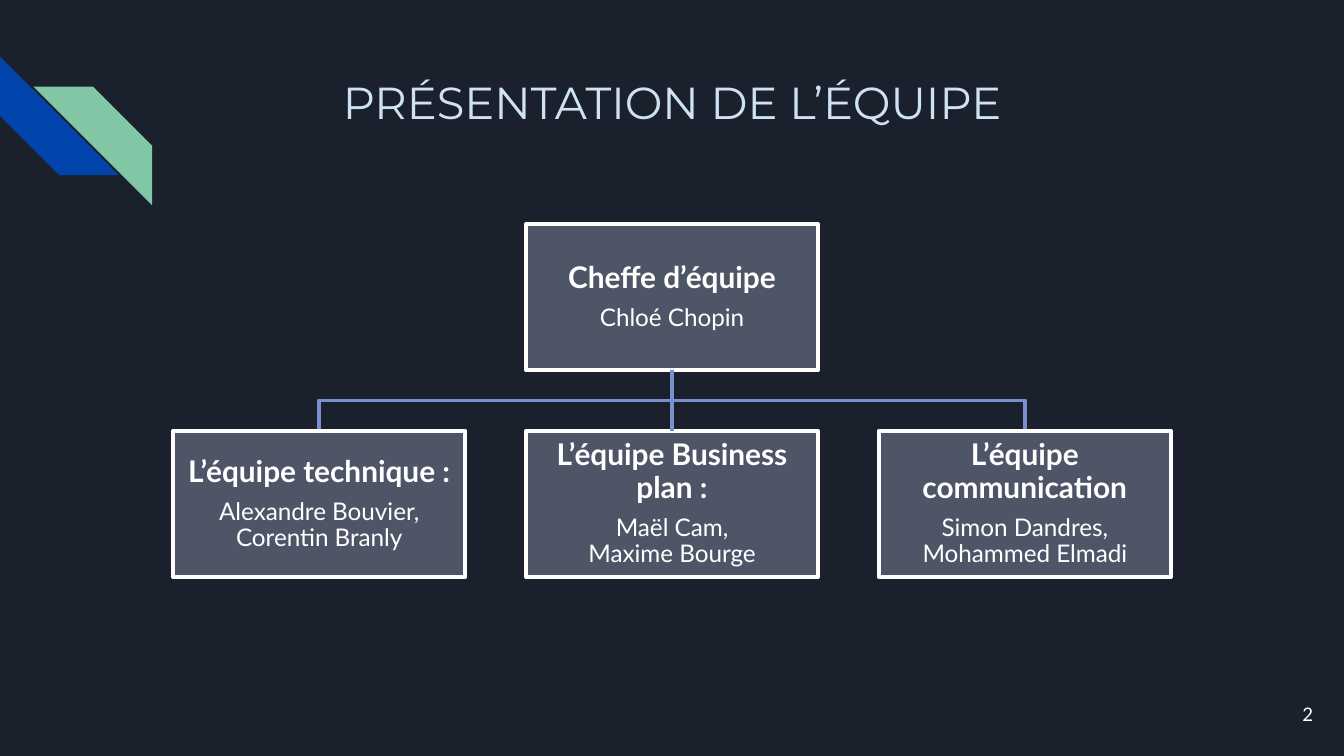
from lxml import etree
from pptx import Presentation
from pptx.dml.color import RGBColor
from pptx.enum.shapes import MSO_CONNECTOR, MSO_SHAPE
from pptx.enum.text import MSO_ANCHOR, MSO_AUTO_SIZE, PP_ALIGN
from pptx.oxml.ns import qn
from pptx.util import Pt

STRIPE, RECTANGLE = MSO_SHAPE.DIAGONAL_STRIPE, MSO_SHAPE.RECTANGLE
STRAIGHT = MSO_CONNECTOR.STRAIGHT
TOP, MIDDLE = MSO_ANCHOR.TOP, MSO_ANCHOR.MIDDLE
CENTER, RIGHT = PP_ALIGN.CENTER, PP_ALIGN.RIGHT
NO_AUTOFIT = MSO_AUTO_SIZE.NONE
BOTTOM_SITE, TOP_SITE = 2, 0

BACKGROUND, WHITE = "1B212C", "FFFFFF"
BLUE, GREEN = "0145AC", "82C7A5"
CARD, LINK, TITLE = "4E5567", "7890CD", "CFE2F3"
LINE_WIDTH = 2

HEADING_FORMAT = {"name": "Lato", "size": Pt(16), "bold": True}
NAME_FORMAT = {"name": "Lato", "size": Pt(13), "bold": False}
TITLE_FORMAT = {"name": "Montserrat", "size": Pt(24), "bold": False}
NUMBER_FORMAT = {"name": "Lato", "size": Pt(10), "bold": False}

LEADER = ("Cheffe d’équipe", ["Chloé Chopin"])
TEAMS = [
    ("L’équipe technique :", ["Alexandre Bouvier, Corentin Branly"]),
    ("L’équipe Business plan :", ["Maël Cam,", "Maxime Bourge"]),
    ("L’équipe communication", ["Simon Dandres, Mohammed Elmadi"]),
]


def color(hex_string):
    return RGBColor.from_string(hex_string)


def set_attributes(target, values):
    for name, value in values.items():
        setattr(target, name, value)


def format_line(line):
    line.color.rgb = color(LINK)
    line.width = Pt(LINE_WIDTH)


def format_frame(frame, margin, anchor):
    set_attributes(frame, {
        "word_wrap": True, "auto_size": NO_AUTOFIT, "vertical_anchor": anchor,
        "margin_left": Pt(margin), "margin_right": Pt(margin),
        "margin_top": Pt(margin), "margin_bottom": Pt(margin),
    })


def write_paragraph(paragraph, text, font_format, font_color, **layout):
    paragraph.text = text
    set_attributes(paragraph, layout)
    set_attributes(paragraph.font, font_format)
    paragraph.font.color.rgb = color(font_color)


def add_stripe(slide, left, top, size, fill):
    shape = slide.shapes.add_shape(STRIPE, Pt(left), Pt(top), Pt(size), Pt(size))
    shape.shadow.inherit = False
    shape.fill.solid()
    shape.fill.fore_color.rgb = color(fill)
    shape.line.fill.background()
    return shape


def add_ornament(slide, left, top, size):
    blue_stripe = add_stripe(slide, left, top, size, BLUE)
    blue_stripe.rotation = 270
    green_stripe = add_stripe(slide, left + 18, top + 16.2, size, GREEN)
    green_stripe._element.spPr.xfrm.set("flipH", "1")


def add_title(slide, left, top, width, height):
    title = slide.shapes.title
    set_attributes(title, {"left": Pt(left), "top": Pt(top),
                           "width": Pt(width), "height": Pt(height)})
    format_frame(title.text_frame, 7.2, TOP)
    write_paragraph(title.text_frame.paragraphs[0], "PRÉSENTATION DE L’ÉQUIPE",
                    TITLE_FORMAT, TITLE, alignment=CENTER)


def add_card(slide, left, top, width, height, heading, names):
    card = slide.shapes.add_shape(RECTANGLE, Pt(left), Pt(top), Pt(width), Pt(height))
    card.shadow.inherit = False
    card.fill.solid()
    card.fill.fore_color.rgb = color(CARD)
    card.line.color.rgb = color(WHITE)
    card.line.width = Pt(LINE_WIDTH)
    frame = card.text_frame
    format_frame(frame, 0.8, MIDDLE)
    write_paragraph(frame.paragraphs[0], heading, HEADING_FORMAT, WHITE,
                    alignment=CENTER, line_spacing=0.9, space_after=Pt(5.6))
    space_after = Pt(4.5 if len(names) == 1 else 0)
    for name in names:
        write_paragraph(frame.add_paragraph(), name, NAME_FORMAT, WHITE,
                        alignment=CENTER, line_spacing=0.9, space_after=space_after)
    return card


def add_elbow(slide, start_x, start_y, end_x, end_y):
    middle_y = (start_y + end_y) / 2
    corners = [(start_x, middle_y), (end_x, middle_y), (end_x, end_y)]
    builder = slide.shapes.build_freeform(Pt(start_x), Pt(start_y))
    builder.add_line_segments([(Pt(x), Pt(y)) for x, y in corners], close=False)
    elbow = builder.convert_to_shape()
    elbow.shadow.inherit = False
    elbow.fill.background()
    format_line(elbow.line)


def add_straight_link(slide, parent, child):
    link = slide.shapes.add_connector(STRAIGHT, 0, 0, 0, 0)
    link.begin_connect(parent, BOTTOM_SITE)
    link.end_connect(child, TOP_SITE)
    format_line(link.line)
    etree.SubElement(link._element.spPr, qn("a:effectLst"))


def add_organisation_chart(slide, left, top, width, height):
    card_width, card_height = 156.5, 78.4
    step = (width - card_width) / (len(TEAMS) - 1)
    center_x = left + width / 2
    leader_bottom = top + card_height
    team_top = top + height - card_height
    team_lefts = [left + index * step for index in range(len(TEAMS))]
    for team_left in (team_lefts[0], team_lefts[-1]):
        add_elbow(slide, center_x, leader_bottom,
                  team_left + card_width / 2, team_top)
    leader = add_card(slide, center_x - card_width / 2, top,
                      card_width, card_height, *LEADER)
    cards = [add_card(slide, team_left, team_top, card_width, card_height, *team)
             for team_left, team in zip(team_lefts, TEAMS)]
    add_straight_link(slide, leader, cards[len(cards) // 2])


def add_slide_number(slide, left, top, width, height):
    box = slide.shapes.add_textbox(Pt(left), Pt(top), Pt(width), Pt(height))
    format_frame(box.text_frame, 7.2, MIDDLE)
    write_paragraph(box.text_frame.paragraphs[0], "2", NUMBER_FORMAT, WHITE,
                    alignment=RIGHT)


def main():
    presentation = Presentation()
    presentation.slide_width, presentation.slide_height = Pt(720), Pt(405)
    slide = presentation.slides.add_slide(presentation.slide_layouts[5])
    slide.background.fill.solid()
    slide.background.fill.fore_color.rgb = color(BACKGROUND)
    add_ornament(slide, 0, 30.2, 63.6)
    add_title(slide, 83, 33, 554, 72)
    add_organisation_chart(slide, 92.75, 120, 534.5, 189.2)
    add_slide_number(slide, 667.4, 367.2, 43.2, 31)
    presentation.save("out.pptx")


if __name__ == "__main__":
    main()
